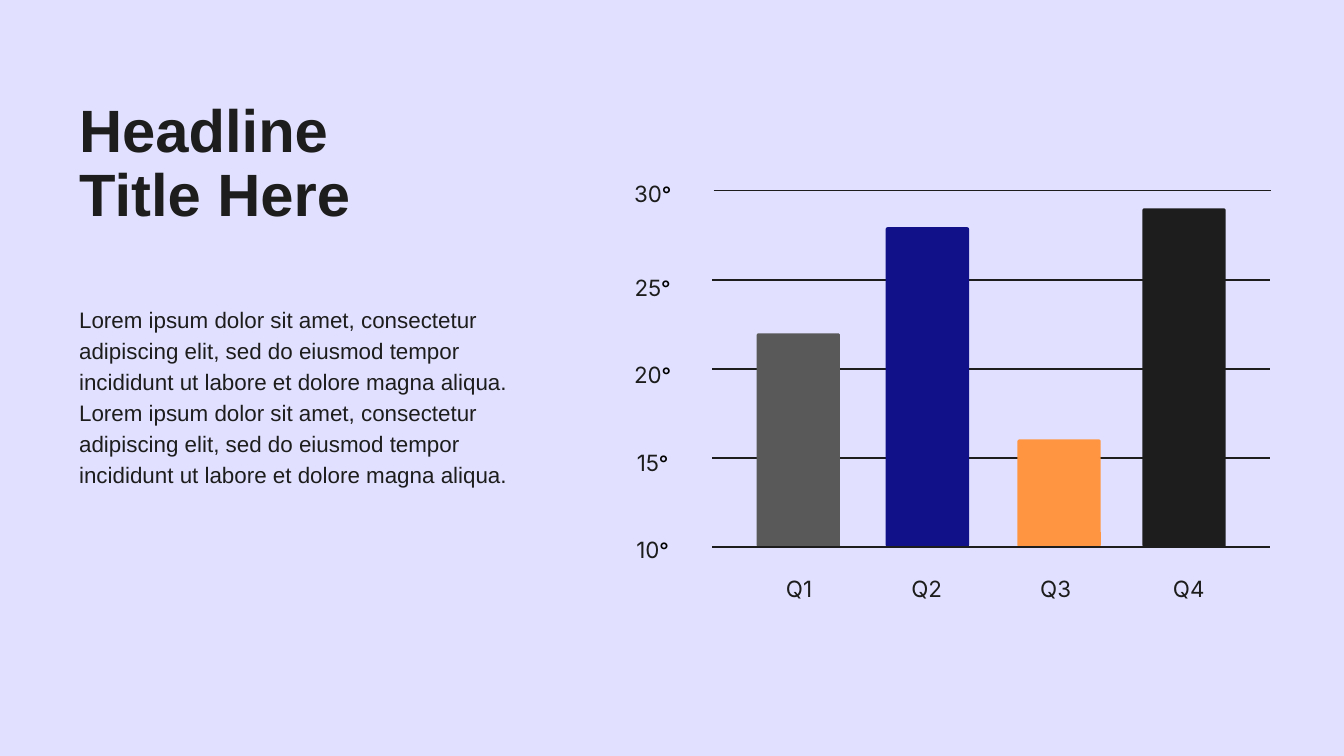
"""Build a headline slide with a quarterly temperature bar diagram."""
from typing import NamedTuple

from lxml import etree
from pptx import Presentation
from pptx import util as u
from pptx.dml.color import RGBColor
from pptx.enum import shapes, text
from pptx.oxml.ns import qn

INK = "1D1D1D"
BASELINE = 4.07
GRID_TOP = 1.42
BAR_WIDTH = 0.62
LOREM = (
    "Lorem ipsum dolor sit amet, consectetur adipiscing elit, sed do eiusmod tempor "
    "incididunt ut labore et dolore magna aliqua."
)


class Style(NamedTuple):
    size: float
    font: str
    color: str = INK
    bold: bool = False
    spacing: float = 1.15
    centered: bool = False


class Quarter(NamedTuple):
    name: str
    label_left: float
    bar_left: float
    bar_top: float
    color: str


class Tick(NamedTuple):
    degrees: int
    label_top: float


TITLE = Style(32, "Arial", bold=True, spacing=0.9)
BODY = Style(12, "Arial")
LABEL = Style(12, "Inter", centered=True)
DEGREE = Style(12, "Arial", "000000", bold=True)

QUARTERS = [
    Quarter("Q1", 5.55, 5.63, 2.48, "595959"),
    Quarter("Q2", 6.5, 6.59, 1.69, "111189"),
    Quarter("Q3", 7.46, 7.57, 3.27, "FF9540"),
    Quarter("Q4", 8.45, 8.5, 1.55, INK),
]
TICKS = [Tick(30, 1.21), Tick(25, 1.91), Tick(20, 2.56), Tick(15, 3.21), Tick(10, 3.86)]


def rgb(color: str) -> RGBColor:
    return RGBColor.from_string(color)


def format_span(span, style: Style) -> None:
    span.font.size = u.Pt(style.size)
    span.font.name = style.font
    span.font.bold = style.bold
    span.font.color.rgb = rgb(style.color)


def add_text(slide, left: float, top: float, width: float, height: float,
             lines: list[str], style: Style):
    box = slide.shapes.add_textbox(*map(u.Inches, (left, top, width, height)))
    frame = box.text_frame
    frame.word_wrap = True
    frame.margin_left = frame.margin_right = u.Inches(0.1)
    frame.margin_top = frame.margin_bottom = u.Inches(0.1)
    frame.text = "\n".join(lines)
    for para in frame.paragraphs:
        para.line_spacing = style.spacing
        para.alignment = text.PP_ALIGN.CENTER if style.centered else text.PP_ALIGN.LEFT
        for span in para.runs:
            format_span(span, style)
    return box


def add_tick_label(slide, tick: Tick) -> None:
    box = add_text(slide, 4.47, tick.label_top, 0.77, 0.4, [str(tick.degrees)], LABEL)
    span = box.text_frame.paragraphs[0].add_run()
    span.text = "°"
    format_span(span, DEGREE)


def add_grid_line(slide, left: float, y: float) -> None:
    line = slide.shapes.add_connector(
        shapes.MSO_CONNECTOR.STRAIGHT,
        u.Inches(left), u.Inches(y), u.Inches(left + 4.15), u.Inches(y),
    )
    line.line.color.rgb = rgb(INK)
    line.line.width = u.Pt(0.75)
    etree.SubElement(line._element.spPr, qn("a:effectLst"))


def add_bar(slide, quarter: Quarter) -> None:
    bar = slide.shapes.add_shape(
        shapes.MSO_SHAPE.ROUNDED_RECTANGLE,
        u.Inches(quarter.bar_left), u.Inches(quarter.bar_top),
        u.Inches(BAR_WIDTH), u.Inches(BASELINE - quarter.bar_top),
    )
    bar.adjustments[0] = 0.023
    bar.shadow.inherit = False
    bar.fill.solid()
    bar.fill.fore_color.rgb = rgb(quarter.color)
    bar.line.fill.background()


def main() -> None:
    deck = Presentation()
    deck.slide_width = u.Inches(10)
    deck.slide_height = deck.slide_width * 9 // 16
    slide = deck.slides.add_slide(deck.slide_layouts[6])
    slide.background.fill.solid()
    slide.background.fill.fore_color.rgb = rgb("E1E1FF")

    add_text(slide, 0.49, 0.65, 3.72, 1.5, ["Headline", "Title Here"], TITLE)
    add_text(slide, 0.49, 2.15, 3.51, 2.27, [f"{LOREM} {LOREM}"], BODY)

    for tick in TICKS:
        add_tick_label(slide, tick)
    for quarter in QUARTERS:
        add_text(slide, quarter.label_left, 4.15, 0.79, 0.4, [quarter.name], LABEL)

    step = (BASELINE - GRID_TOP) / (len(TICKS) - 1)
    for row in range(len(TICKS) - 1):
        add_grid_line(slide, 5.3 if row else 5.31, GRID_TOP + row * step)
    for quarter in QUARTERS:
        add_bar(slide, quarter)
    add_grid_line(slide, 5.3, BASELINE)

    deck.save("out.pptx")


if __name__ == "__main__":
    main()
